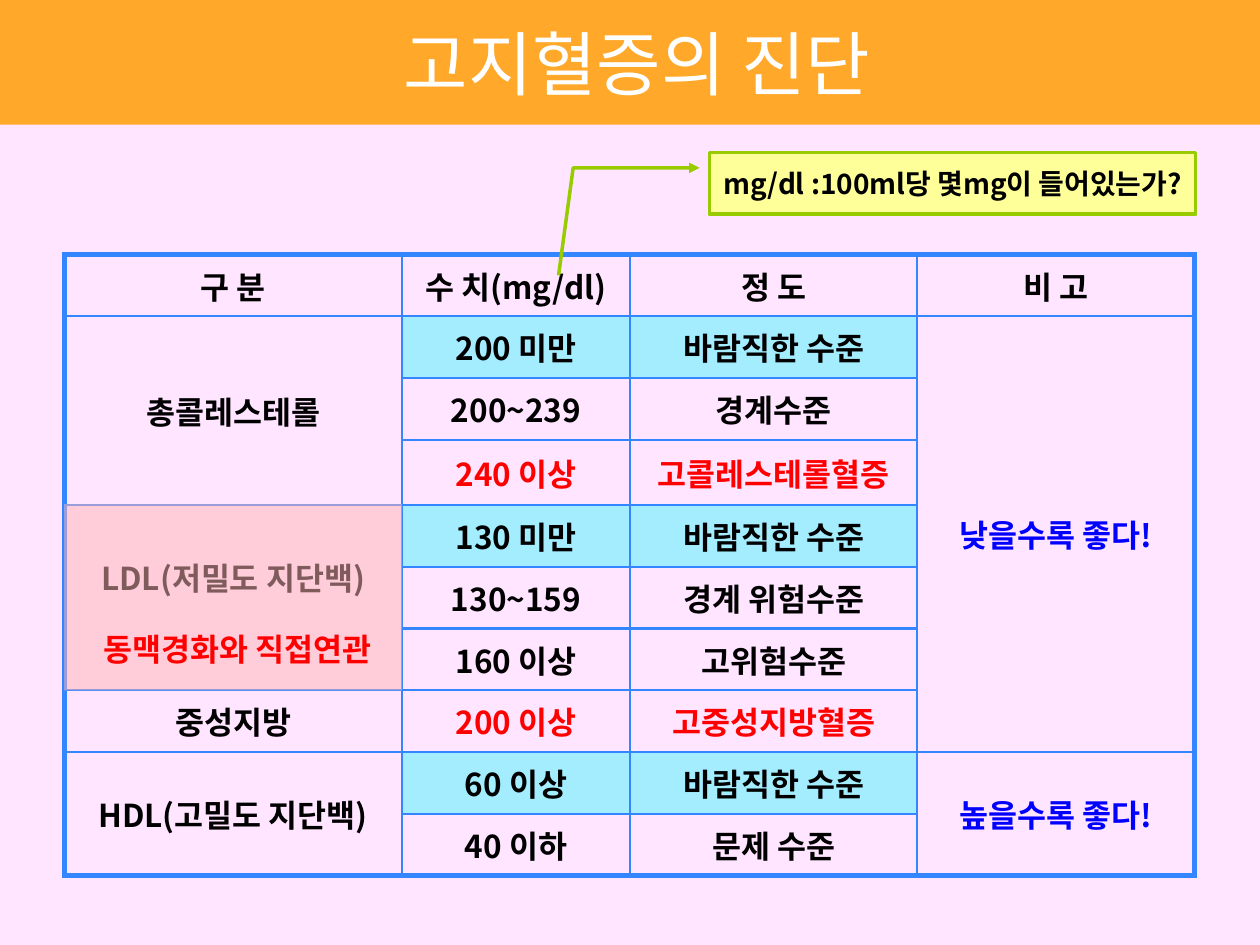
from dataclasses import dataclass

from lxml import etree
from pptx import Presentation
from pptx.dml.color import RGBColor
from pptx.enum.shapes import MSO_SHAPE
from pptx.enum.text import MSO_ANCHOR, MSO_AUTO_SIZE, PP_ALIGN
from pptx.oxml.ns import qn
from pptx.table import _Cell
from pptx.text.text import TextFrame
from pptx.util import Inches, Pt

RECTANGLE = MSO_SHAPE.RECTANGLE
CALLOUT = MSO_SHAPE.LINE_CALLOUT_2
MIDDLE = MSO_ANCHOR.MIDDLE
CENTER = PP_ALIGN.CENTER
NO_AUTOFIT = MSO_AUTO_SIZE.NONE

FONT = "Noto Sans CJK KR"
COLORS = {
    "background": "FFE5FF",
    "banner": "FFA829",
    "white": "FFFFFF",
    "black": "000000",
    "red": "FF0000",
    "blue": "0000FF",
    "border": "3386FF",
    "desirable": "A3EDFF",
    "note": "FFFF99",
    "note_line": "99CC00",
    "highlight": "FFB7B7",
}
COLUMN_WIDTHS = [2.68, 1.81, 2.28, 2.2]
ROW_HEIGHTS = [0.49, 0.49, 0.49, 0.52] + [0.49] * 6
OUTER, HORIZONTAL, VERTICAL = 3, 1.5, 1


@dataclass
class Entry:
    row: int
    column: int
    text: str
    color: str = "black"
    fill: str = ""
    rows: int = 1
    bottom: float = 0.05


@dataclass
class Level:
    value: str
    degree: str
    color: str = "black"
    fill: str = ""


HEADERS = ["구 분", "수 치(mg/dl)", "정 도", "비 고"]
LEVELS = [
    Level("200 미만", "바람직한 수준", fill="desirable"),
    Level("200~239", "경계수준"),
    Level("240 이상", "고콜레스테롤혈증", color="red"),
    Level("130 미만", "바람직한 수준", fill="desirable"),
    Level("130~159", "경계 위험수준"),
    Level("160 이상", "고위험수준"),
    Level("200 이상", "고중성지방혈증", color="red"),
    Level("60 이상", "바람직한 수준", fill="desirable"),
    Level("40 이하", "문제 수준"),
]
GROUPS = [
    Entry(1, 0, "총콜레스테롤", rows=3),
    Entry(4, 0, "LDL(저밀도 지단백)", rows=3, bottom=0.38),
    Entry(7, 0, "중성지방"),
    Entry(8, 0, "HDL(고밀도 지단백)", rows=2),
    Entry(1, 3, "낮을수록 좋다!", color="blue", rows=7),
    Entry(8, 3, "높을수록 좋다!", color="blue", rows=2),
]


def rgb(name: str) -> RGBColor:
    return RGBColor.from_string(COLORS[name])


def write(frame: TextFrame, text: str, size: float, color: str, bold: bool = True) -> None:
    frame.text = text
    paragraph = frame.paragraphs[0]
    paragraph.alignment = CENTER
    font = paragraph.runs[0].font
    font.size = Pt(size)
    font.bold = bold
    font.name = FONT
    font.color.rgb = rgb(color)
    properties = paragraph.runs[0]._r.get_or_add_rPr()
    etree.SubElement(properties, qn("a:ea"), typeface=FONT)


def set_borders(cell: _Cell, row: int, column: int) -> None:
    last_row = row + (cell.span_height if cell.is_merge_origin else 1) == len(ROW_HEIGHTS)
    last_column = column == len(COLUMN_WIDTHS) - 1
    widths = {
        "a:lnL": OUTER if column == 0 else VERTICAL,
        "a:lnR": OUTER if last_column else VERTICAL,
        "a:lnT": OUTER if row == 0 else HORIZONTAL,
        "a:lnB": OUTER if last_row else HORIZONTAL,
    }
    properties = cell._tc.get_or_add_tcPr()
    for position, (tag, width) in enumerate(widths.items()):
        line = etree.Element(qn(tag), w=str(Pt(width)))
        solid = etree.SubElement(line, qn("a:solidFill"))
        etree.SubElement(solid, qn("a:srgbClr"), val=COLORS["border"])
        properties.insert(position, line)


def add_title(slide) -> None:
    title = slide.shapes.title
    title.left, title.top = Inches(0), Inches(0)
    title.width, title.height = Inches(10), Inches(0.99)
    title.fill.solid()
    title.fill.fore_color.rgb = rgb("banner")
    frame = title.text_frame
    frame.auto_size = NO_AUTOFIT
    frame.word_wrap = False
    frame.vertical_anchor = MIDDLE
    frame.margin_left = Inches(0.21)
    write(frame, "고지혈증의 진단", 40, "white", bold=False)


def add_diagnosis_table(slide) -> None:
    table = slide.shapes.add_table(
        len(ROW_HEIGHTS), len(COLUMN_WIDTHS), Inches(0.51), Inches(2.02),
        Inches(sum(COLUMN_WIDTHS)), Inches(sum(ROW_HEIGHTS))).table
    table.first_row = False
    table.horz_banding = False
    for column, width in zip(table.columns, COLUMN_WIDTHS):
        column.width = Inches(width)
    for row, height in zip(table.rows, ROW_HEIGHTS):
        row.height = Inches(height)

    entries = [Entry(0, column, header) for column, header in enumerate(HEADERS)]
    for row, level in enumerate(LEVELS, start=1):
        entries.append(Entry(row, 1, level.value, level.color, level.fill))
        entries.append(Entry(row, 2, level.degree, level.color, level.fill))
    for entry in entries + GROUPS:
        cell = table.cell(entry.row, entry.column)
        if entry.rows > 1:
            cell.merge(table.cell(entry.row + entry.rows - 1, entry.column))
        cell.vertical_anchor = MIDDLE
        cell.margin_bottom = Inches(entry.bottom)
        write(cell.text_frame, entry.text, 18, entry.color)
        if entry.fill:
            cell.fill.solid()
            cell.fill.fore_color.rgb = rgb(entry.fill)
        else:
            cell.fill.background()
    for row in range(len(ROW_HEIGHTS)):
        for column in range(len(COLUMN_WIDTHS)):
            cell = table.cell(row, column)
            if cell.is_spanned:
                cell.fill.background()
            set_borders(cell, row, column)


def add_unit_note(slide) -> None:
    note = slide.shapes.add_shape(
        CALLOUT, Inches(5.63), Inches(1.21), Inches(3.86), Inches(0.49))
    for index, value in enumerate([0.25, -0.02, 0.25, -0.28, 1.99, -0.31]):
        note.adjustments[index] = value
    note.shadow.inherit = False
    note.fill.solid()
    note.fill.fore_color.rgb = rgb("note")
    note.line.color.rgb = rgb("note_line")
    note.line.width = Pt(2)
    etree.SubElement(note.line._get_or_add_ln(), qn("a:headEnd"), type="triangle")
    frame = note.text_frame
    frame.word_wrap = False
    frame.vertical_anchor = MIDDLE
    frame.margin_left = frame.margin_right = 0
    write(frame, "mg/dl :100ml당 몇mg이 들어있는가?", 16, "black")


def add_ldl_highlight(slide) -> None:
    group = slide.shapes.add_group_shape()
    veil = group.shapes.add_shape(
        RECTANGLE, Inches(0.51), Inches(4), Inches(2.68), Inches(1.48))
    veil.shadow.inherit = False
    veil.fill.solid()
    veil.fill.fore_color.rgb = rgb("highlight")
    veil.line.fill.background()
    tint = veil.fill._xPr.find(qn("a:solidFill"))[0]
    etree.SubElement(tint, qn("a:alpha"), val="50000")
    remark = group.shapes.add_textbox(
        Inches(0.35), Inches(4.95), Inches(3.07), Inches(0.4))
    remark.text_frame.word_wrap = True
    write(remark.text_frame, "동맥경화와 직접연관", 18, "red")


def main() -> None:
    deck = Presentation()
    deck.slide_width, deck.slide_height = Inches(10), Inches(7.5)
    slide = deck.slides.add_slide(deck.slide_layouts[5])
    slide.background.fill.solid()
    slide.background.fill.fore_color.rgb = rgb("background")
    add_title(slide)
    add_diagnosis_table(slide)
    add_unit_note(slide)
    add_ldl_highlight(slide)
    deck.save("out.pptx")


if __name__ == "__main__":
    main()
